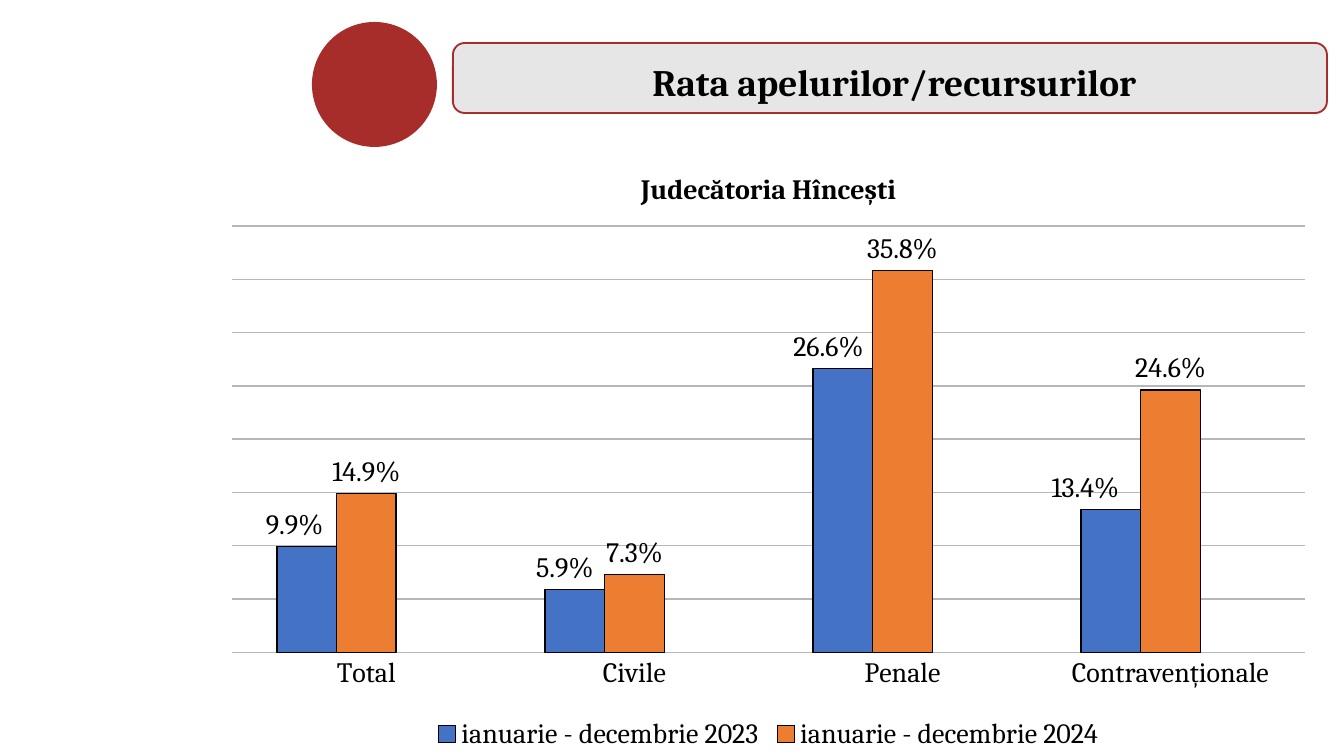
from pptx import Presentation
from pptx.chart.data import CategoryChartData
from pptx.dml.color import RGBColor
from pptx.enum.chart import (XL_CHART_TYPE, XL_LABEL_POSITION,
                             XL_LEGEND_POSITION, XL_TICK_MARK)
from pptx.enum.shapes import MSO_SHAPE
from pptx.enum.text import PP_ALIGN
from pptx.oxml import parse_xml
from pptx.oxml.ns import nsdecls
from pptx.util import Emu, Pt

SCALE = 914400 / 134.4
FONT = "Cambria"
HUES = {"red": "A72D2A", "pale": "E6E6E6", "text": "000000",
        "grid": "B7B7B7", "blue": "4472C4", "orange": "ED7D31",
        "lime": "C0CF3A"}
CATS = ["Total", "Civile", "Penale", "Contravenționale"]
DATA = [
    ("ianuarie - decembrie 2023", "blue", [0.099, 0.059, 0.266, 0.134]),
    ("ianuarie - decembrie 2024", "orange", [0.149, 0.073, 0.358, 0.246]),
    ("Series 3", "lime", [None] * 4),
]
SHIFTS = [-12, -10, -14, -26]


def px(num):
    return Emu(round(num * SCALE))


def hue(name):
    return RGBColor.from_string(HUES[name])


def style(font, size, bold=False):
    font.name, font.size, font.bold = FONT, Pt(size), bold
    font.color.rgb = hue("text")


def add_shape(slide, kind, box, fill, line=None):
    shape = slide.shapes.add_shape(kind, *map(px, box))
    shape.shadow.inherit = False
    shape.fill.solid()
    shape.fill.fore_color.rgb = hue(fill)
    if line:
        shape.line.color.rgb = hue(line)
        shape.line.width = Pt(1)
    else:
        shape.line.fill.background()


def add_banner(slide, left, top, width, height):
    """Draw a dot as tall as the box, then the titled bar beside it."""
    add_shape(slide, MSO_SHAPE.OVAL, (left, top, height, height), "red")
    gap = 141
    add_shape(slide, MSO_SHAPE.ROUNDED_RECTANGLE,
              (left + gap, top + 21, width - gap, 70), "pale", "red")
    text = slide.shapes.add_textbox(
        px(left + 133), px(top + 36), px(899), px(54))
    text.text_frame.word_wrap = True
    para = text.text_frame.paragraphs[0]
    para.alignment = PP_ALIGN.CENTER
    para.line_spacing = 0.9
    run = para.add_run()
    run.text = "Rata apelurilor/recursurilor"
    style(run.font, 20, True)


def layout(x, y=None, w=None, h=None):
    """Return a manual layout; an x alone is an offset."""
    parts = {"x": x, "y": y, "w": w, "h": h}
    tags = "".join(f'<c:{key} val="{val}"/>'
                   for key, val in parts.items() if val is not None)
    modes = "" if y is None else (
        '<c:layoutTarget val="inner"/>'
        '<c:xMode val="edge"/><c:yMode val="edge"/>')
    return parse_xml(f'<c:layout {nsdecls("c")}><c:manualLayout>'
                     f'{modes}{tags}</c:manualLayout></c:layout>')


def style_axes(chart):
    axis = chart.category_axis
    axis.major_tick_mark = XL_TICK_MARK.NONE
    axis.format.line.color.rgb = hue("grid")
    axis = chart.value_axis
    axis.visible = False
    axis.minimum_scale, axis.maximum_scale = 0, 0.4
    axis.major_unit = 0.05
    axis.tick_labels.number_format = "0.0%"
    axis.tick_labels.number_format_is_linked = False
    line = axis.major_gridlines.format.line
    line.color.rgb = hue("grid")
    line.width = Pt(0.75)


def style_bars(chart, width):
    plot = chart.plots[0]
    plot.gap_width, plot.overlap = 150, 0
    plot.vary_by_categories = False
    for bars, (_, name, _) in zip(plot.series, DATA):
        bars.format.fill.solid()
        bars.format.fill.fore_color.rgb = hue(name)
    for bars in list(plot.series)[:2]:
        bars.format.line.color.rgb = hue("text")
        bars.format.line.width = Pt(0.75)
        tags = bars.data_labels
        tags.show_value = True
        tags.number_format = "0.0%"
        tags.number_format_is_linked = False
        tags.position = XL_LABEL_POSITION.OUTSIDE_END
        style(tags.font, 15)
    for spot in range(len(CATS)):
        label = plot.series[0].points[spot].data_label
        label.position = XL_LABEL_POSITION.OUTSIDE_END
    for tag, shift in zip(chart.element.xpath(".//c:dLbl"), SHIFTS):
        tag.insert(1, layout(round(shift / width, 3)))


def add_legend(chart):
    chart.has_legend = True
    legend = chart.legend
    legend.position = XL_LEGEND_POSITION.BOTTOM
    legend.include_in_layout = False
    style(legend.font, 15)
    chart.element.xpath(".//c:legendPos")[0].addnext(parse_xml(
        f'<c:legendEntry {nsdecls("c")}><c:idx val="2"/>'
        '<c:delete val="1"/></c:legendEntry>'))


def add_rates(slide, left, top, width, height):
    data = CategoryChartData(number_format="0.0%")
    data.categories = CATS
    for name, _, vals in DATA:
        data.add_series(name, vals)
    chart = slide.shapes.add_chart(
        XL_CHART_TYPE.COLUMN_CLUSTERED,
        *map(px, (left, top, width, height)), data).chart
    style(chart.font, 15)
    run = chart.chart_title.text_frame.paragraphs[0].add_run()
    run.text = "Judecătoria Hîncești"
    style(run.font, 15, True)
    chart.chart_title.include_in_layout = False
    style_axes(chart)
    style_bars(chart, width)
    add_legend(chart)
    area = chart.element.xpath(".//c:plotArea")[0]
    for old in area.xpath("./c:layout"):
        area.remove(old)
    area.insert(0, layout(0.02, 0.13, 0.96, 0.7))


def main():
    deck = Presentation()
    deck.slide_width, deck.slide_height = px(1344), px(756)
    slide = deck.slides.add_slide(deck.slide_layouts[6])
    add_banner(slide, 312, 22, 1015, 125)
    add_rates(slide, 210, 147, 1117, 609)
    deck.save("out.pptx")


if __name__ == "__main__":
    main()
